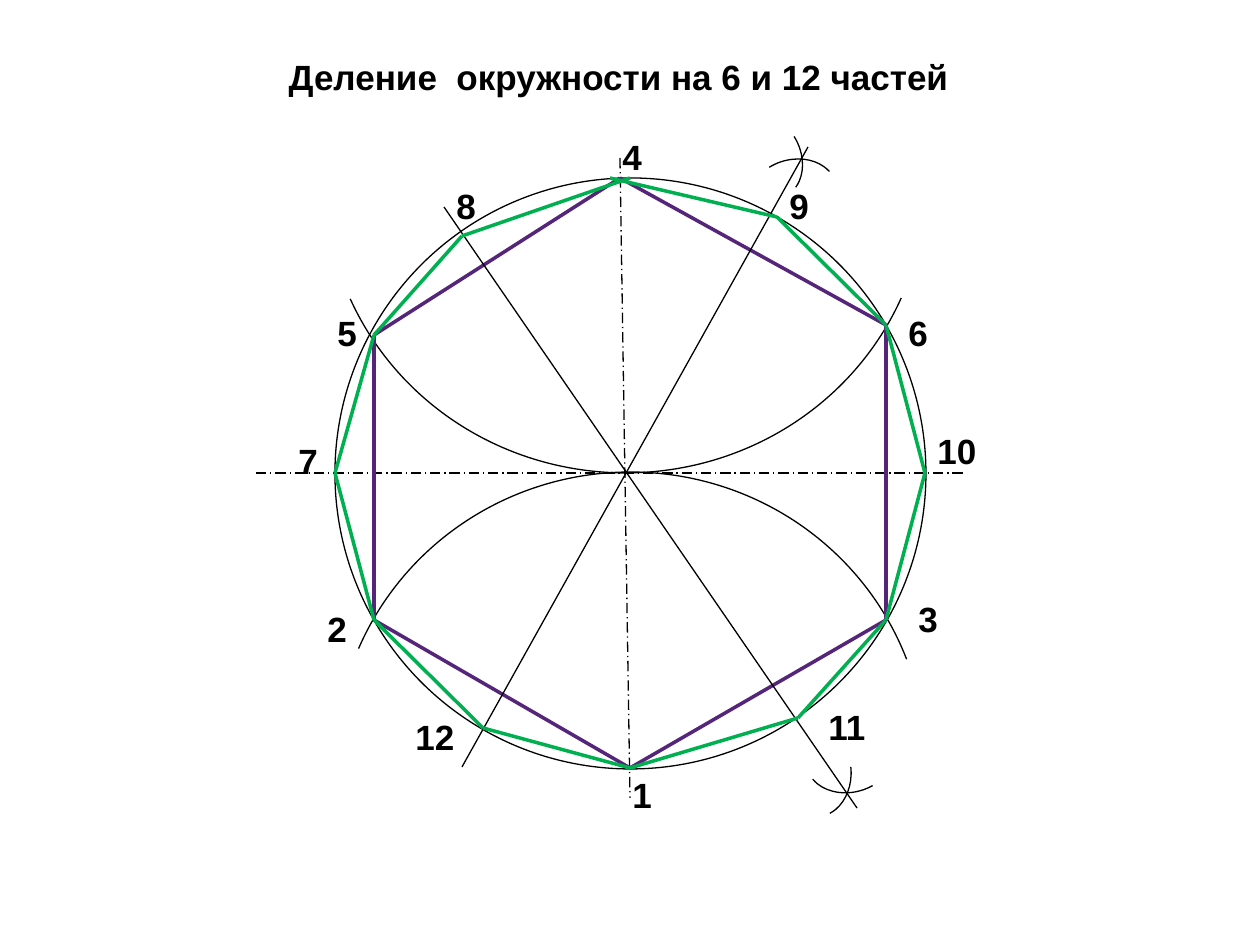
from dataclasses import dataclass
from lxml import etree
from pptx import Presentation, util as u
from pptx.dml.color import RGBColor
from pptx.enum import dml, shapes, text
from pptx.oxml.ns import qn


@dataclass(frozen=True)
class Theme:
    ink: str = "000000"
    hexa: str = "552579"
    dodeca: str = "00B050"
    font: str = "Arial"
    size: int = 20
    thin: float = 0.75
    thick: float = 2


T = Theme()


def px(n):
    return u.Emu(round(n * u.Inches(1) / 126))


def pen(line, hue, width, dash=None):
    line.color.rgb = RGBColor.from_string(hue)
    line.width = u.Pt(width)
    if dash:
        line.dash_style = dash


def style(frame, words):
    frame.text = words
    frame.word_wrap = True
    frame.auto_size = text.MSO_AUTO_SIZE.SHAPE_TO_FIT_TEXT
    frame.vertical_anchor = text.MSO_ANCHOR.TOP
    par = frame.paragraphs[0]
    par.alignment = text.PP_ALIGN.LEFT
    par.font.name, par.font.size, par.font.bold = T.font, u.Pt(T.size), True
    par.font.color.rgb = RGBColor.from_string(T.ink)


def heading(slide, box):
    title = slide.shapes.title
    title.left, title.top, title.width, title.height = map(px, box)
    style(title.text_frame, "Деление  окружности на 6 и 12 частей")


def circle(slide, box):
    """Draw the divided circle; all points are relative to its box."""
    left, top, wide, high = box

    def place(x, y):
        return px(left + x), px(top + y)

    def line(start, end, hue=T.ink, width=T.thin, dash=None):
        link = slide.shapes.add_connector(
            shapes.MSO_CONNECTOR.STRAIGHT, *place(*start), *place(*end))
        pen(link.line, hue, width, dash)
        etree.SubElement(link._element.spPr, qn("a:effectLst"))

    def curve(kind, x, y, w, h, turn=0, ends=()):
        form = slide.shapes.add_shape(kind, *place(x, y), px(w), px(h))
        form.shadow.inherit = False
        form.fill.background()
        pen(form.line, T.ink, T.thin)
        form.rotation = turn
        for i, end in enumerate(ends):
            form.adjustments[i] = end

    def chain(points, hue):
        for start, end in zip(points, points[1:]):
            line(start, end, hue, T.thick)

    # Points of division
    dots = {1: (295, 590), 2: (39, 442), 3: (551, 442), 4: (285, 0),
            5: (39, 157), 6: (551, 147), 7: (0, 295), 8: (127, 58),
            9: (442, 39), 10: (590, 295), 11: (463, 540), 12: (148, 550)}

    # Circle and its axes
    curve(shapes.MSO_SHAPE.OVAL, 0, 0, wide, high)
    for start, end in [((285, -20), (295, 620)), ((-79, 295), (630, 295))]:
        line(start, end, dash=dml.MSO_LINE.LONG_DASH_DOT)

    # Two large compass arcs, then two small crossings
    small, short, long = (91, 73), (160.37, 206.55), (149.97, 206.55)
    for x, y, size, turn, ends in [
            (5, 289, (581, 591), 270, (175.64, 41.7)),
            (0, -296, (581, 601), 90, (175.64, 40.25)),
            (412, -18, small, 341.6, long),
            (383, -58, small, 59.5, short),
            (434, 557, small, 85.6, short),
            (470, 541, small, 163.8, long)]:
        curve(shapes.MSO_SHAPE.ARC, x, y, *size, turn, ends)

    # Hexagon
    chain([dots[n] for n in (2, 5, 4, 6, 3, 1, 2)], T.hexa)

    # Bisectors
    line((127, 589), (473, -31))
    line((109, 29), (522, 630))

    # Numbers
    for n, (x, y, w) in enumerate([
            (285, 589, 49), (-20, 423, 39), (571, 413, 39), (275, -49, 49),
            (-10, 127, 39), (561, 127, 59), (-49, 255, 49), (109, 0, 49),
            (442, 0, 49), (590, 245, 69), (481, 521, 69), (68, 531, 69)], 1):
        label = slide.shapes.add_textbox(*place(x, y), px(w), px(55))
        style(label.text_frame, str(n))

    # Dodecagon, whose two ends cross over at the top
    ring = [dots[n] for n in (9, 6, 10, 3, 11, 1, 12, 2, 7, 5, 8)]
    chain([(275, 0), *ring, (295, 0)], T.dodeca)


def main():
    deck = Presentation()
    deck.slide_width, deck.slide_height = px(1260), px(945)
    slide = deck.slides.add_slide(deck.slide_layouts[5])
    heading(slide, (276, 49, 748, 55))
    circle(slide, (335, 178, 591, 591))
    deck.save("out.pptx")


if __name__ == "__main__":
    main()
